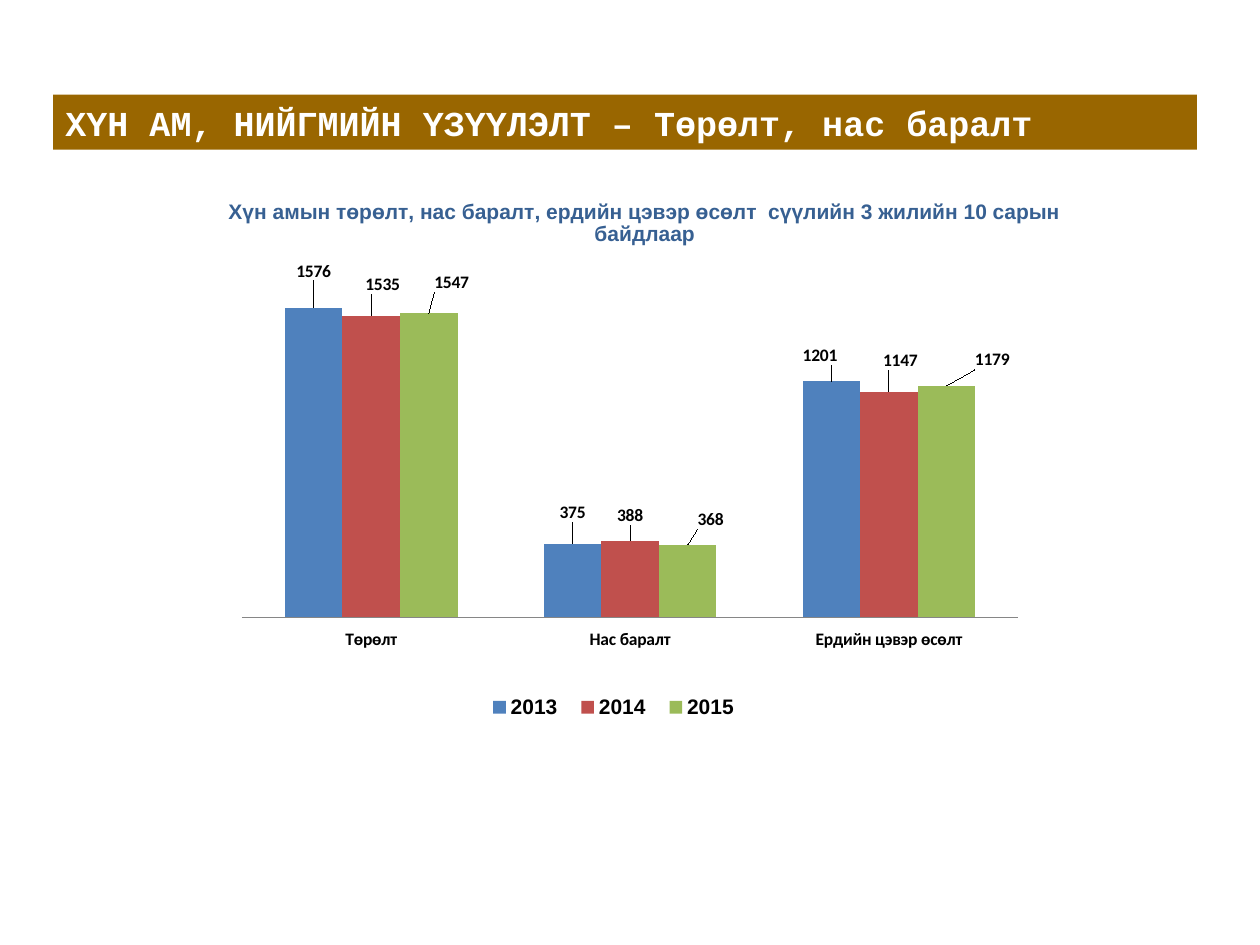
from lxml.etree import SubElement
from pptx import Presentation
from pptx.chart.data import CategoryChartData
from pptx.dml.color import RGBColor
from pptx.enum.chart import XL_CHART_TYPE, XL_LABEL_POSITION, XL_LEGEND_POSITION, XL_TICK_LABEL_POSITION, XL_TICK_MARK
from pptx.enum.shapes import MSO_SHAPE
from pptx.enum.text import MSO_ANCHOR, PP_ALIGN
from pptx.oxml import parse_xml
from pptx.oxml.ns import nsdecls, qn
from pptx.util import Cm, Pt

HEADING = "ХҮН АМ, НИЙГМИЙН ҮЗҮҮЛЭЛТ – Төрөлт, нас баралт"
CHART_TITLE = "Хүн амын төрөлт, нас баралт, ердийн цэвэр өсөлт  сүүлийн 3 жилийн 10 сарын байдлаар"
CATEGORIES = ["Төрөлт", "Нас баралт", "Ердийн цэвэр өсөлт"]
YEARS = [
    {"name": "2013", "values": [1576, 375, 1201], "color": "4F81BD",
     "offsets": [(0, -0.04), (0, -0.03), (-0.01, -0.02)]},
    {"name": "2014", "values": [1535, 388, 1147], "color": "C0504D",
     "offsets": [(0.01, -0.03), (0, -0.02), (0.01, -0.03)]},
    {"name": "2015", "values": [1547, 368, 1179], "color": "9BBB59",
     "offsets": [(0.02, -0.03), (0.02, -0.02), (0.04, -0.02)]},
]
LEFT, WIDTH = Cm(1.07), Cm(23.06)
HEADING_FONT = {"name": "Courier New", "size": Pt(20), "bold": True, "color": "FFFFFF"}
TITLE_FONT = {"name": "Arial", "size": Pt(12), "bold": True, "color": "376092"}
LEGEND_FONT = {"name": "Arial", "size": Pt(12), "bold": True, "color": "000000"}
CHART_FONT = {"name": "Calibri", "size": Pt(10), "bold": True, "color": "000000"}


def rgb(value):
    return RGBColor.from_string(value)


def set_font(font, style):
    for attribute, value in style.items():
        if attribute == "color":
            font.color.rgb = rgb(value)
        else:
            setattr(font, attribute, value)


def set_layout(previous, **values):
    for old in previous.getparent().findall(qn("c:layout")):
        old.getparent().remove(old)
    layout = parse_xml(f"<c:layout {nsdecls('c')}><c:manualLayout/></c:layout>")
    for tag, value in values.items():
        SubElement(layout[0], qn(f"c:{tag}")).set("val", str(value))
    previous.addnext(layout)


def add_heading(slide):
    bar = slide.shapes.add_shape(MSO_SHAPE.RECTANGLE, LEFT, Cm(1.91), WIDTH, Cm(1.11))
    bar.shadow.inherit = False
    bar.fill.solid()
    bar.fill.fore_color.rgb = rgb("996600")
    bar.line.fill.background()
    bar.text_frame.word_wrap = True
    bar.text_frame.vertical_anchor = MSO_ANCHOR.MIDDLE
    paragraph = bar.text_frame.paragraphs[0]
    paragraph.text = HEADING
    paragraph.alignment = PP_ALIGN.JUSTIFY
    set_font(paragraph.runs[0].font, HEADING_FONT)


def add_series_format(series, year):
    series.format.fill.solid()
    series.format.fill.fore_color.rgb = rgb(year["color"])
    labels = series.data_labels
    labels.show_value = True
    labels.position = XL_LABEL_POSITION.OUTSIDE_END
    set_font(labels.font, CHART_FONT)
    for index in range(len(CATEGORIES)):
        label = series.points[index].data_label
        label.position = XL_LABEL_POSITION.OUTSIDE_END
        set_font(label.font, CHART_FONT)
    for element, (x, y) in zip(series._element.iter(qn("c:dLbl")), year["offsets"]):
        set_layout(element.find(qn("c:idx")), x=x, y=y)


def add_births_chart(slide):
    data = CategoryChartData()
    data.categories = CATEGORIES
    for year in YEARS:
        data.add_series(year["name"], year["values"])
    chart = slide.shapes.add_chart(
        XL_CHART_TYPE.COLUMN_CLUSTERED, LEFT, Cm(3.81), WIDTH, Cm(11), data).chart
    set_font(chart.font, CHART_FONT)

    title = chart.chart_title
    title.text_frame.text = CHART_TITLE
    set_font(title.text_frame.paragraphs[0].runs[0].font, TITLE_FONT)

    chart.has_legend = True
    chart.legend.position = XL_LEGEND_POSITION.TOP
    chart.legend.include_in_layout = False
    set_font(chart.legend.font, LEGEND_FONT)

    plot = chart.plots[0]
    plot.gap_width = 150
    plot.overlap = 0
    plot.vary_by_categories = False
    for series, year in zip(plot.series, YEARS):
        add_series_format(series, year)

    category_axis = chart.category_axis
    category_axis.major_tick_mark = XL_TICK_MARK.NONE
    category_axis.tick_label_position = XL_TICK_LABEL_POSITION.LOW
    category_axis.format.line.color.rgb = rgb("868686")
    set_font(category_axis.tick_labels.font, CHART_FONT)
    value_axis = chart.value_axis
    value_axis.visible = False
    value_axis.has_major_gridlines = False
    value_axis.minimum_scale, value_axis.maximum_scale = 0, 1800

    root = chart._chartSpace
    edges = {"xMode": "edge", "yMode": "edge"}
    set_layout(root.find(".//" + qn("c:title")).find(qn("c:tx")), **edges, x=0.15, y=0.01)
    set_layout(root.find(".//" + qn("c:legendPos")), **edges, x=0.37, y=0.92, w=0.24, h=0.06)
    plot_area = root.find(".//" + qn("c:plotArea"))
    first = plot_area.find(qn("c:barChart"))
    anchor = SubElement(plot_area, qn("c:layout"))
    first.addprevious(anchor)
    marker = parse_xml(f"<c:marker {nsdecls('c')}/>")
    anchor.addprevious(marker)
    set_layout(marker, layoutTarget="inner", **edges, x=0.165, y=0.137, w=0.679, h=0.648)
    plot_area.remove(marker)


def main():
    presentation = Presentation()
    presentation.slide_width, presentation.slide_height = Cm(25.4), Cm(19.05)
    slide = presentation.slides.add_slide(presentation.slide_layouts[6])
    add_heading(slide)
    add_births_chart(slide)
    presentation.save("out.pptx")


if __name__ == "__main__":
    main()
